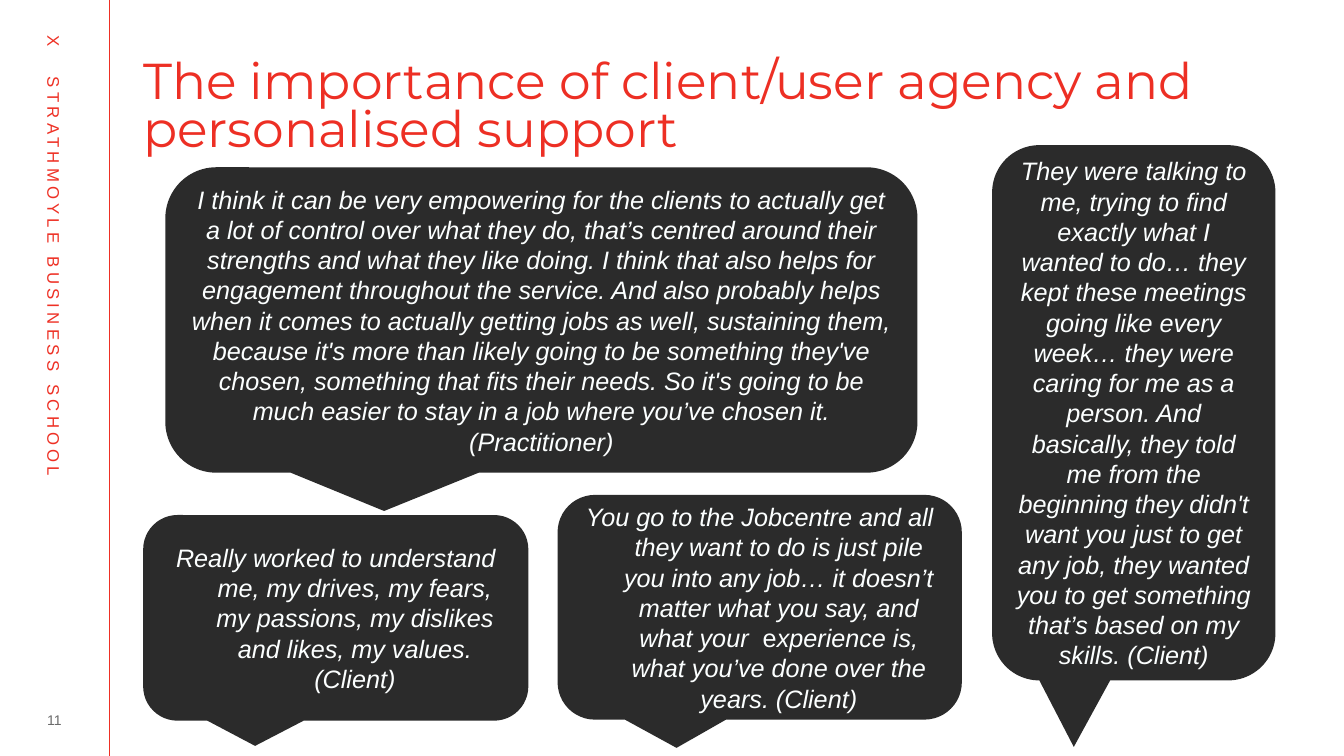
from pptx import Presentation
from pptx.dml.color import RGBColor
from pptx.enum.shapes import MSO_CONNECTOR, MSO_SHAPE
from pptx.enum.text import MSO_ANCHOR, MSO_AUTO_SIZE, PP_ALIGN
from pptx.oxml.ns import qn
from pptx.util import Pt
from lxml import etree

LEFT, CENTER = PP_ALIGN.LEFT, PP_ALIGN.CENTER
TOP, MIDDLE = MSO_ANCHOR.TOP, MSO_ANCHOR.MIDDLE
RED = RGBColor(0xEE, 0x30, 0x24)
TITLE_RED = RGBColor(0xED, 0x2F, 0x24)
CHARCOAL = RGBColor(0x2B, 0x2B, 0x2B)
GREY = RGBColor(0x6B, 0x6B, 0x6B)
WHITE = RGBColor(0xFC, 0xFF, 0xFF)

TITLE = "The importance of client/user agency and personalised support"
SCHOOL = "X\tSTRATHMOYLE BUSINESS SCHOOL"
PAGE_NUMBER = "11"
QUOTES = [
    {"area": (553, 491, 401, 223), "tip": (671, 742), "hanging": 38, "parts": [
        ("You go to the Jobcentre and all they want to do is just pile you into any job… "
         "it doesn’t matter what you say, and what your ", True),
        (" e", False),
        ("xperience is, what you’ve done over the years. (Client)", True)]},
    {"area": (142, 511, 382, 204), "tip": (253, 740), "hanging": 38, "parts": [
        ("Really worked to understand me, my drives, my fears, my passions, "
         "my dislikes and likes, my values. (Client)", True)]},
    {"area": (164, 166, 746, 303), "tip": (381, 507), "hanging": 0, "parts": [
        ("I think it can be very empowering for the clients to actually get a lot of control "
         "over what they do, that’s centred around their strengths and what they like doing. "
         "I think that also helps for engagement throughout the service. And also probably "
         "helps when it comes to actually getting jobs as well, sustaining them, because it's "
         "more than likely going to be something they've chosen, something that fits their "
         "needs. So it's going to be much easier to stay in a job where you’ve chosen it. "
         "(Practitioner)", True)]},
    {"area": (984, 144, 281, 531), "tip": (1065, 741), "hanging": 0, "parts": [
        ("They were talking to me, trying to find exactly what I wanted to do… they kept "
         "these meetings going like every week… they were caring for me as a person. And "
         "basically, they told me from the beginning they didn't want you just to get any "
         "job, they wanted you to get something that’s based on my skills. (Client)", True)]},
]

EMU_PER_PX = 9144


def px(*lengths):
    return [length * EMU_PER_PX for length in lengths]


def write(box, parts, size, color, font="Arial", align=LEFT, anchor=TOP,
          insets=(10, 5, 10, 5), line_spacing=None, space_after=0, hanging=0,
          tracking=0, tab=0):
    frame = box.text_frame
    frame.word_wrap = True
    frame.auto_size = MSO_AUTO_SIZE.NONE
    frame.vertical_anchor = anchor
    (frame.margin_left, frame.margin_top,
     frame.margin_right, frame.margin_bottom) = px(*insets)
    para = frame.paragraphs[0]
    para.alignment = align
    para.space_after = Pt(space_after)
    if line_spacing:
        para.line_spacing = line_spacing
    properties = para._p.get_or_add_pPr()
    if hanging:
        properties.set("marL", str(hanging * EMU_PER_PX))
        properties.set("indent", str(-hanging * EMU_PER_PX))
    if tab:
        stops = etree.SubElement(properties, qn("a:tabLst"))
        etree.SubElement(stops, qn("a:tab"), pos=str(tab * EMU_PER_PX), algn="l")
    for text, italic in parts:
        span = para.add_run()
        span.text = text
        span.font.name = font
        span.font.size = Pt(size)
        span.font.italic = italic
        span.font.color.rgb = color
        if tracking:
            span._r.get_or_add_rPr().set("spc", str(tracking * 100))


def add_callout(page, quote):
    left, top, width, height = quote["area"]
    tip_x, tip_y = quote["tip"]
    callout = page.shapes.add_shape(MSO_SHAPE.ROUNDED_RECTANGULAR_CALLOUT,
                                    *px(*quote["area"]))
    callout.adjustments[0] = (tip_x - left) / width - 0.5
    callout.adjustments[1] = (tip_y - top) / height - 0.5
    callout.shadow.inherit = False
    callout.fill.solid()
    callout.fill.fore_color.rgb = CHARCOAL
    callout.line.fill.background()
    write(callout, quote["parts"], 18, WHITE, align=CENTER, anchor=MIDDLE,
          space_after=10, hanging=quote["hanging"])


def main():
    deck = Presentation()
    deck.slide_width, deck.slide_height = px(1333, 750)
    page = deck.slides.add_slide(deck.slide_layouts[5])

    title = page.shapes.title
    title.left, title.top, title.width, title.height = px(142, 39, 1134, 120)
    write(title, [(TITLE, False)], 36, TITLE_RED, font="Montserrat",
          insets=(0, 21, 0, 0), line_spacing=0.8)

    margin_line = page.shapes.add_connector(MSO_CONNECTOR.STRAIGHT, *px(108, 0, 108, 750))
    margin_line.line.color.rgb = RED
    margin_line.line.width = Pt(0.5)
    etree.SubElement(margin_line._element.spPr, qn("a:effectLst"))

    school = page.shapes.add_textbox(*px(-230, 294, 567, 30))
    school.rotation = 90
    write(school, [(SCHOOL, False)], 12, RED, tracking=3, tab=41)

    number = page.shapes.add_textbox(*px(26, 702, 56, 25))
    write(number, [(PAGE_NUMBER, False)], 10, GREY, align=CENTER, anchor=MIDDLE,
          insets=(0, 0, 0, 0))

    for quote in QUOTES:
        add_callout(page, quote)

    deck.save("out.pptx")


if __name__ == "__main__":
    main()
